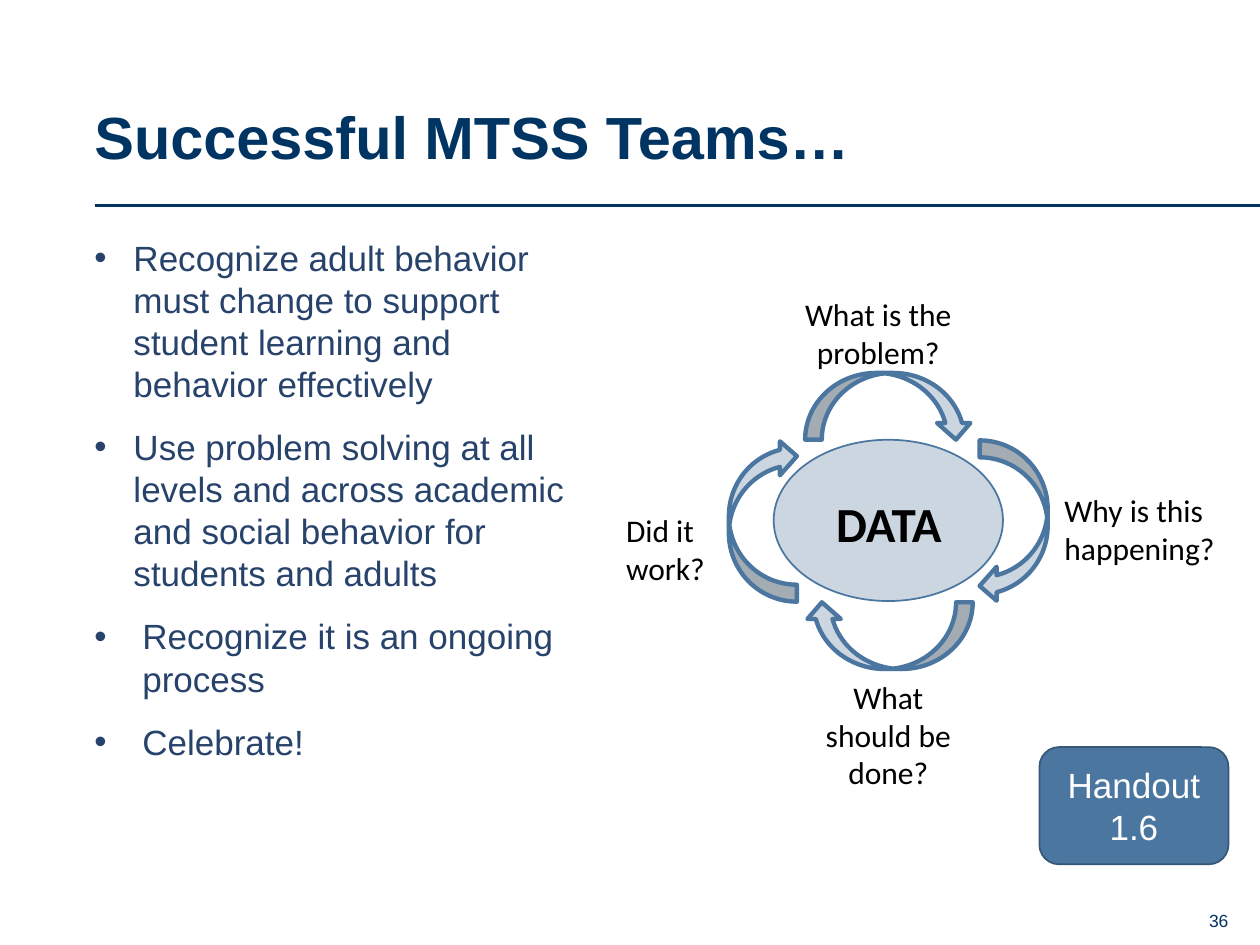
from dataclasses import dataclass

from lxml.etree import SubElement
from pptx import Presentation
from pptx.dml.color import RGBColor
from pptx.enum.shapes import MSO_CONNECTOR as Connector, MSO_SHAPE as Preset
from pptx.enum.text import MSO_ANCHOR as Anchor, MSO_AUTO_SIZE as AutoSize, PP_ALIGN as Align
from pptx.oxml.ns import qn
from pptx.shapes.autoshape import Shape
from pptx.slide import Slide
from pptx.text.text import TextFrame
from pptx.util import Pt

EMU_PER_PX = 9144  # 100 px to the inch
NAVY, BODY_BLUE, STEEL, PALE = "003462", "27436B", "4B76A0", "CCD6E0"
BLACK, WHITE, EDGE = "000000", "FFFFFF", "375776"


@dataclass(frozen=True)
class Box:
    left: int
    top: int
    width: int
    height: int

    def emu(self) -> tuple[int, ...]:
        return tuple(px(v) for v in (self.left, self.top, self.width, self.height))


@dataclass(frozen=True)
class TextStyle:
    size: int
    color: str
    font: str = "Arial"
    bold: bool = False
    align: Align = Align.LEFT


@dataclass(frozen=True)
class Label:
    text: str
    box: Box
    style: TextStyle


@dataclass(frozen=True)
class CycleArrow:
    box: Box
    rotation: int


@dataclass(frozen=True)
class Bullet:
    text: str
    indent: int


QUESTION = TextStyle(18, BLACK, "Calibri")
CENTERED_QUESTION = TextStyle(18, BLACK, "Calibri", align=Align.CENTER)

BULLETS = [
    Bullet("Recognize adult behavior must change to support student learning "
           "and behavior effectively", 31),
    Bullet("Use problem solving at all levels and across academic and social "
           "behavior for students and adults", 31),
    Bullet("Recognize it is an ongoing process", 38),
    Bullet("Celebrate!", 38),
]
ARROWS = [
    CycleArrow(Box(740, 387, 129, 54), 90),
    CycleArrow(Box(639, 296, 133, 53), 0),
    CycleArrow(Box(639, 478, 133, 53), 180),
    CycleArrow(Box(541, 386, 129, 54), 270),
]
LABELS = [
    Label("DATA", Box(617, 387, 177, 33),
          TextStyle(28, BLACK, "Calibri", True, Align.CENTER)),
    Label("Why is this happening?", Box(835, 385, 140, 71), QUESTION),
    Label("What should be done?", Box(631, 533, 148, 23), CENTERED_QUESTION),
    Label("What is the problem?", Box(623, 229, 148, 23), CENTERED_QUESTION),
    Label("Did it work?", Box(487, 401, 88, 23), QUESTION),
]


def px(value: int) -> int:
    return value * EMU_PER_PX


def rgb(color: str) -> RGBColor:
    return RGBColor.from_string(color)


def style_paragraph(paragraph, style: TextStyle) -> None:
    paragraph.alignment = style.align
    font = paragraph.font
    font.name, font.size, font.bold = style.font, Pt(style.size), style.bold
    font.color.rgb = rgb(style.color)


def add_text(slide: Slide, label: Label, inset: bool = True) -> TextFrame:
    frame = slide.shapes.add_textbox(*label.box.emu()).text_frame
    frame.word_wrap = True
    if not inset:
        frame.margin_left = frame.margin_top = frame.margin_right = frame.margin_bottom = 0
    if label.text:
        frame.text = label.text
        style_paragraph(frame.paragraphs[0], label.style)
    return frame


def add_bullets(slide: Slide, box: Box, bullets: list[Bullet], style: TextStyle) -> None:
    frame = add_text(slide, Label("", box, style), inset=False)
    for index, bullet in enumerate(bullets):
        paragraph = frame.paragraphs[0] if index == 0 else frame.add_paragraph()
        paragraph.text = bullet.text
        paragraph.space_after = Pt(12)
        properties = paragraph._p.get_or_add_pPr()
        properties.set("marL", str(px(bullet.indent)))
        properties.set("indent", str(-px(bullet.indent)))
        SubElement(properties, qn("a:buFont"), typeface="Arial")
        SubElement(properties, qn("a:buChar"), char="•")
        style_paragraph(paragraph, style)


def add_preset(slide: Slide, preset: Preset, box: Box, fill: str, line: str,
               line_width: float) -> Shape:
    shape = slide.shapes.add_shape(preset, *box.emu())
    shape.shadow.inherit = False
    shape.fill.solid()
    shape.fill.fore_color.rgb = rgb(fill)
    shape.line.color.rgb = rgb(line)
    shape.line.width = Pt(line_width)
    return shape


def add_title_rule(slide: Slide) -> None:
    rule = slide.shapes.add_connector(Connector.STRAIGHT, px(75), px(163), px(1000), px(163))
    rule.line.color.rgb = rgb(NAVY)
    rule.line.width = Pt(1.5)
    SubElement(rule._element.spPr, qn("a:effectLst"))


def add_cycle(slide: Slide) -> None:
    add_preset(slide, Preset.OVAL, Box(614, 349, 182, 128), PALE, STEEL, 1)
    for arrow in ARROWS:
        shape = add_preset(slide, Preset.CURVED_DOWN_ARROW, arrow.box, PALE, STEEL, 2.5)
        shape.rotation = arrow.rotation
    for label in LABELS:
        add_text(slide, label)


def add_handout_badge(slide: Slide) -> None:
    badge = add_preset(slide, Preset.FLOWCHART_ALTERNATE_PROCESS,
                       Box(825, 593, 150, 93), STEEL, EDGE, 1)
    frame = badge.text_frame
    frame.text = "Handout 1.6"
    frame.word_wrap = True
    frame.vertical_anchor = Anchor.MIDDLE
    style_paragraph(frame.paragraphs[0], TextStyle(20, WHITE, align=Align.CENTER))


def main() -> None:
    presentation = Presentation()
    presentation.slide_width, presentation.slide_height = px(1000), px(750)
    slide = presentation.slides.add_slide(presentation.slide_layouts[6])

    add_title_rule(slide)
    title = add_text(slide, Label("Successful MTSS Teams…", Box(75, 24, 900, 113),
                                  TextStyle(34, NAVY, bold=True)), inset=False)
    title.vertical_anchor = Anchor.BOTTOM
    title.paragraphs[0].line_spacing = 0.9
    add_bullets(slide, Box(75, 188, 376, 488), BULLETS, TextStyle(20, BODY_BLUE))
    add_cycle(slide)
    add_handout_badge(slide)
    number = add_text(slide, Label("36", Box(958, 722, 17, 17),
                                   TextStyle(10, NAVY, align=Align.RIGHT)), inset=False)
    number.word_wrap = False
    number.auto_size = AutoSize.SHAPE_TO_FIT_TEXT
    number.vertical_anchor = Anchor.MIDDLE

    presentation.save("out.pptx")


if __name__ == "__main__":
    main()
